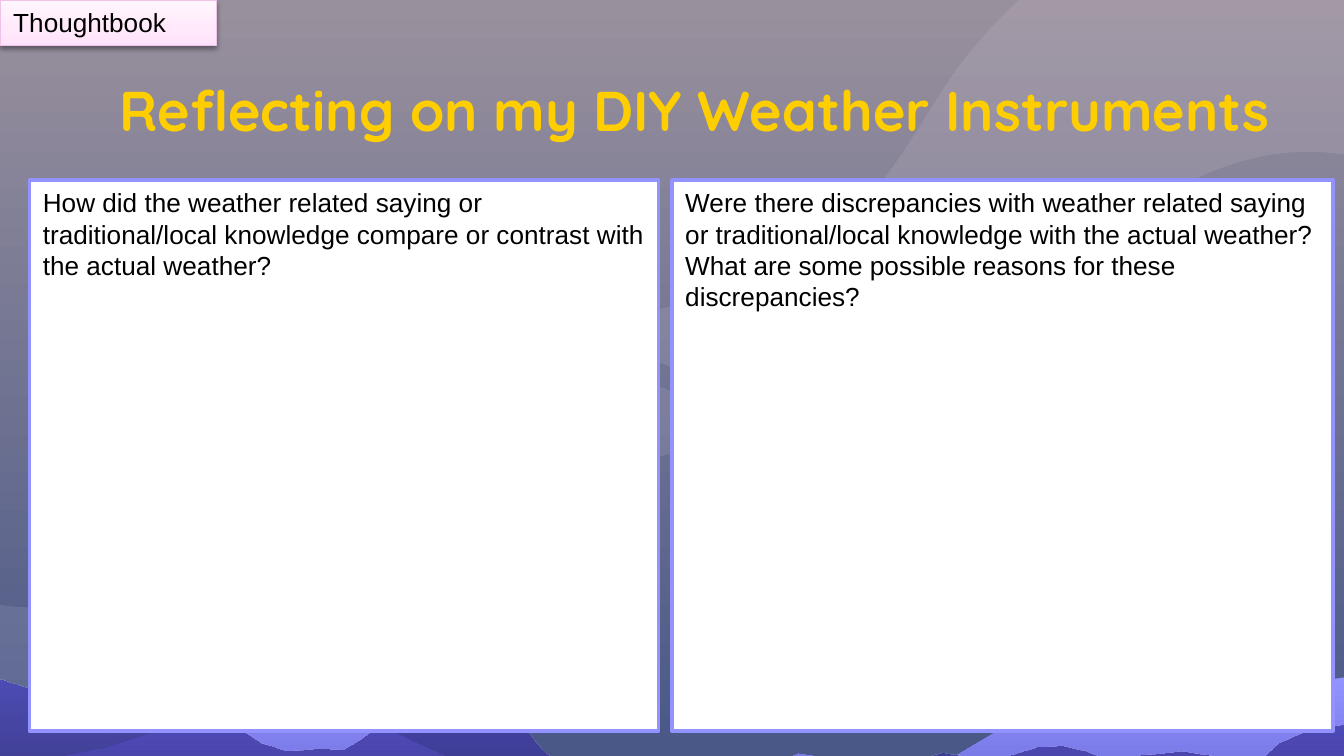
from lxml import etree
from pptx import Presentation
from pptx.dml.color import RGBColor
from pptx.enum.shapes import MSO_SHAPE
from pptx.enum.text import MSO_ANCHOR, PP_ALIGN
from pptx.oxml.ns import qn
from pptx.util import Inches, Pt

RECT = MSO_SHAPE.RECTANGLE
TOP, LEFT = MSO_ANCHOR.TOP, PP_ALIGN.LEFT

BLACK = RGBColor(0x00, 0x00, 0x00)
WHITE = RGBColor(0xFF, 0xFF, 0xFF)
GOLD = RGBColor(0xFF, 0xCE, 0x00)
MAUVE = RGBColor(0x99, 0x90, 0x9D)
SLATE = RGBColor(0x49, 0x58, 0x87)
MIST = RGBColor(0xFD, 0xF0, 0xF7)
LILAC = RGBColor(0x93, 0x93, 0xFF)
INDIGO = RGBColor(0x48, 0x46, 0xBB)
NIGHT = RGBColor(0x28, 0x1B, 0x66)
PINK_EDGE = RGBColor(0xF1, 0xC2, 0xE8)
PINK = RGBColor(0xFF, 0xE1, 0xF9)
PALE_PINK = RGBColor(0xFF, 0xE9, 0xFB)
BLUSH = RGBColor(0xFF, 0xF6, 0xFD)

# Outlines in grid cells. Clouds: a start, then two handles and an end per curve.
CLOUD = [
    (1000, 115), (992, 114), (984, 113), (975, 113), (962, 113), (949, 114), (936, 117),
    (903, 124), (872, 140), (844, 161), (815, 182), (789, 207), (761, 228),
    (730, 252), (696, 271), (659, 282), (636, 289), (612, 292), (588, 292),
    (575, 292), (561, 291), (547, 288), (508, 281), (474, 263), (441, 240),
    (447, 239), (452, 238), (458, 237), (468, 244), (479, 248), (491, 248),
    (513, 248), (532, 235), (544, 214), (546, 213), (548, 212), (551, 211),
    (578, 200), (603, 186), (625, 167), (645, 150), (662, 129), (676, 107),
    (692, 83), (705, 58), (724, 36), (735, 23), (746, 11), (758, 0),
]
CRESCENT = [
    (544, 214), (532, 235), (513, 248), (491, 248), (479, 248), (468, 244), (458, 237),
    (487, 232), (516, 224), (544, 214),
]
# Hills: the ridge from point to point, then the foot.
FAR_HILLS = [
    (1001, 504), (970, 508), (943, 513), (925, 522), (889, 530), (865, 540), (839, 543),
    (832, 543), (821, 541), (783, 544), (755, 542), (739, 546), (712, 562), (710, 562),
    (684, 568), (658, 564), (635, 567), (594, 561), (569, 571), (548, 580), (521, 584),
    (468, 602), (431, 595), (391, 586), (354, 573), (305, 551), (257, 526), (233, 511),
    (215, 516), (197, 524), (186, 525), (175, 527), (152, 536), (128, 541), (78, 557),
    (33, 566), (10, 568), (0, 567), (0, 678), (1001, 678),
]
NEAR_HILLS = [
    (0, 506), (0, 653), (1001, 653), (1001, 539), (976, 542), (951, 553), (935, 568),
    (878, 559), (848, 562), (829, 568), (807, 559), (789, 555), (771, 556), (749, 563),
    (735, 568), (715, 563), (700, 560), (676, 568), (657, 578), (636, 577), (612, 572),
    (595, 568), (578, 571), (506, 580), (471, 583), (441, 575), (413, 568), (398, 552),
    (384, 533), (359, 517), (342, 515), (331, 518), (305, 533), (280, 542), (267, 551),
    (255, 558), (235, 557), (213, 559), (194, 553), (174, 540), (164, 538), (142, 542),
    (121, 538), (106, 531), (90, 529), (63, 528), (35, 517),
]


def bezier(points, steps=8):
    """Points along a chain of cubic curves."""
    line = [points[0]]
    for i in range(0, len(points) - 1, 3):
        for n in range(1, steps + 1):
            t = n / steps
            weights = ((1 - t) ** 3, 3 * t * (1 - t) ** 2, 3 * t * t * (1 - t), t ** 3)
            line.append(tuple(sum(w * pt[axis] for w, pt in zip(weights, points[i:i + 4]))
                              for axis in (0, 1)))
    return line


def set_gradient(fill, element, stops, angle):
    """Fill with (position %, colour, opacity %) stops; angle is counter-clockwise."""
    fill.gradient()
    fill.gradient_angle = angle
    gs_list = element.find(".//" + qn("a:gsLst"))
    for gs in list(gs_list):
        gs_list.remove(gs)
    for pos, color, opacity in stops:
        gs = etree.SubElement(gs_list, qn("a:gs"), pos=str(pos * 1000))
        clr = etree.SubElement(gs, qn("a:srgbClr"), val=str(color))
        if opacity < 100:
            etree.SubElement(clr, qn("a:alpha"), val=str(opacity * 1000))


prs = Presentation()
prs.slide_width = Inches(10)
prs.slide_height = prs.slide_width * 9 // 16
CELL = prs.slide_width // 1000  # square cells, 1000 columns across the slide
s = prs.slides.add_slide(prs.slide_layouts[6])
set_gradient(s.background.fill, s.element, [(0, MAUVE, 100), (100, SLATE, 100)], 270)

# Clouds: top right, then turned half round at bottom left; hills in front
cloud_outline = [(1000, 0)] + bezier(CLOUD)
crescent_outline = bezier(CRESCENT)
scenery = [
    (cloud_outline, False, None),
    (crescent_outline, False, None),
    (cloud_outline, True, None),
    (crescent_outline, True, None),
    (FAR_HILLS, False, [(0, LILAC, 100), (100, INDIGO, 100)]),
    (NEAR_HILLS, False, [(0, INDIGO, 84), (100, NIGHT, 63)]),
]
for outline, turned, stops in scenery:
    pts = [(x * CELL, y * CELL) for x, y in outline]
    fb = s.shapes.build_freeform(*pts[0])
    fb.add_line_segments(pts[1:], close=True)
    sp = fb.convert_to_shape()
    sp.shadow.inherit = False
    sp.line.fill.background()
    if turned:
        sp.left = 1000 * CELL - sp.left - sp.width
        sp.top = 565 * CELL - sp.top - sp.height
        sp.rotation = 180
    if stops:
        set_gradient(sp.fill, sp.element, stops, 270)
    else:
        sp.fill.solid()
        sp.fill.fore_color.rgb = MIST
        clr = sp.element.spPr.find(qn("a:solidFill")).find(qn("a:srgbClr"))
        etree.SubElement(clr, qn("a:alpha"), val="10000")

# Title
title = s.shapes.add_textbox(79 * CELL, 46 * CELL, 899 * CELL, 63 * CELL)
tf = title.text_frame
tf.word_wrap = True
tf.margin_left = tf.margin_right = tf.margin_top = tf.margin_bottom = 10 * CELL
tf.text = "Reflecting on my DIY Weather Instruments"
font = tf.paragraphs[0].runs[0].font
font.name, font.size, font.bold = "Quicksand", Pt(30), True
font.color.rgb = GOLD

# Tab and the two question boxes
boxes = [
    (0, 0, 161, 34, PINK_EDGE, 0.75, "Thoughtbook"),
    (22, 134, 468, 410, LILAC, 2,
     "How did the weather related saying or traditional/local knowledge compare or "
     "contrast with the actual weather?"),
    (500, 134, 492, 410, LILAC, 2,
     "Were there discrepancies with weather related saying or traditional/local "
     "knowledge with the actual weather?\n"
     "What are some possible reasons for these discrepancies?"),
]
for x, y, w, h, edge, weight, text in boxes:
    sp = s.shapes.add_shape(RECT, x * CELL, y * CELL, w * CELL, h * CELL)
    sp.shadow.inherit = False
    sp.line.color.rgb = edge
    sp.line.width = Pt(weight)
    if edge == PINK_EDGE:
        set_gradient(sp.fill, sp.element,
                     [(0, PINK, 100), (35, PALE_PINK, 100), (100, BLUSH, 100)], 90)
        shadow = etree.SubElement(sp.element.spPr.find(qn("a:effectLst")), qn("a:outerShdw"),
                                  blurRad=str(Pt(3.1)), dist=str(Pt(1.6)),
                                  dir="5400000", rotWithShape="0")
        clr = etree.SubElement(shadow, qn("a:srgbClr"), val=str(BLACK))
        etree.SubElement(clr, qn("a:alpha"), val="38000")
    else:
        sp.fill.solid()
        sp.fill.fore_color.rgb = WHITE
    tf = sp.text_frame
    tf.word_wrap = True
    tf.vertical_anchor = TOP
    tf.text = text
    for p in tf.paragraphs:
        p.alignment = LEFT
        font = p.runs[0].font
        font.name, font.size = "Arial", Pt(14)
        font.color.rgb = BLACK

prs.save("out.pptx")
